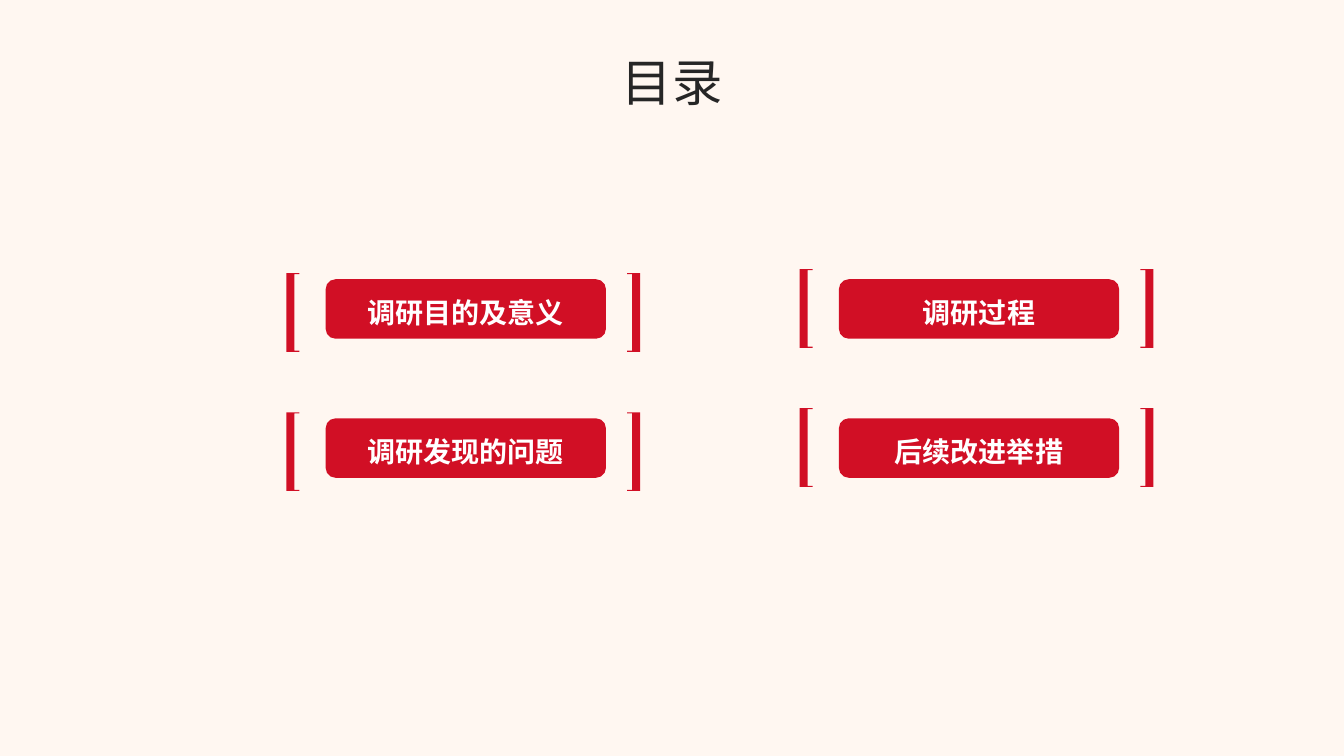
"""Build a contents slide with four bracketed topic buttons."""
from dataclasses import dataclass

from pptx import Presentation
from pptx.dml.color import RGBColor
from pptx.enum.shapes import MSO_SHAPE as Shape
from pptx.enum.text import MSO_ANCHOR as Anchor, PP_ALIGN as Align
from pptx.util import Inches, Pt

COLORS = {"background": "FFF7F1", "red": "D10F25", "dark": "262626", "white": "FFFFFF"}
FONT = "Arial"
BUTTON_WIDTH, BUTTON_HEIGHT = 2.78, 0.59
BRACKET_GAP = 0.39
BRACKET_SPAN, BRACKET_HEIGHT = 3.51, 0.78
BRACKET_DEPTH, STEM, LIP = 0.13, 0.08, 0.01
COLUMNS = (3.23, 8.32)
BRACKET_RISES = (0.06, 0.1)
FIRST_ROW, ROW_STEP = 2.77, 1.38
TOPICS = (("调研目的及意义", "调研过程"), ("调研发现的问题", "后续改进举措"))


@dataclass
class Topic:
    text: str
    left: float
    top: float
    bracket_rise: float


def paint(item, color: str) -> None:
    item.fill.solid()
    item.fill.fore_color.rgb = RGBColor.from_string(COLORS[color])
    item.line.fill.background()
    item.shadow.inherit = False


def write(box, text: str, size: int, color: str, bold: bool = False) -> None:
    frame = box.text_frame
    frame.word_wrap = True
    frame.text = text
    para = frame.paragraphs[0]
    para.alignment = Align.CENTER
    font = para.runs[0].font
    font.name, font.size, font.bold = FONT, Pt(size), bold
    font.color.rgb = RGBColor.from_string(COLORS[color])


def draw_bracket(page, edge: float, top: float, inward: int) -> None:
    bottom = top + BRACKET_HEIGHT
    tip, stem = edge + inward * BRACKET_DEPTH, edge + inward * STEM
    outline = [(edge, top), (tip, top), (tip, top + LIP), (stem, top + LIP),
               (stem, bottom - LIP), (tip, bottom - LIP), (tip, bottom), (edge, bottom)]
    points = [(Inches(x), Inches(y)) for x, y in outline]
    builder = page.shapes.build_freeform(*points[0])
    builder.add_line_segments(points[1:], close=True)
    paint(builder.convert_to_shape(), "red")


def draw_topic(page, topic: Topic) -> None:
    left_edge = topic.left - BRACKET_GAP
    bracket_top = topic.top - topic.bracket_rise
    draw_bracket(page, left_edge, bracket_top, 1)
    draw_bracket(page, left_edge + BRACKET_SPAN, bracket_top, -1)
    button = page.shapes.add_shape(Shape.ROUNDED_RECTANGLE, Inches(topic.left), Inches(topic.top),
                                   Inches(BUTTON_WIDTH), Inches(BUTTON_HEIGHT))
    paint(button, "red")
    write(button, topic.text, 20, "white", bold=True)
    button.text_frame.vertical_anchor = Anchor.MIDDLE
    button.text_frame.paragraphs[0].line_spacing = 1.2


def main() -> None:
    deck = Presentation()
    deck.slide_width, deck.slide_height = Inches(13.33), Inches(7.5)
    page = deck.slides.add_slide(deck.slide_layouts[6])
    page.background.fill.solid()
    page.background.fill.fore_color.rgb = RGBColor.from_string(COLORS["background"])

    title = page.shapes.add_textbox(Inches(5.47), Inches(0.46), Inches(2.39), Inches(0.77))
    write(title, "目录", 36, "dark")
    for row, texts in enumerate(TOPICS):
        for text, left, rise in zip(texts, COLUMNS, BRACKET_RISES):
            draw_topic(page, Topic(text, left, FIRST_ROW + row * ROW_STEP, rise))
    deck.save("out.pptx")


if __name__ == "__main__":
    main()
